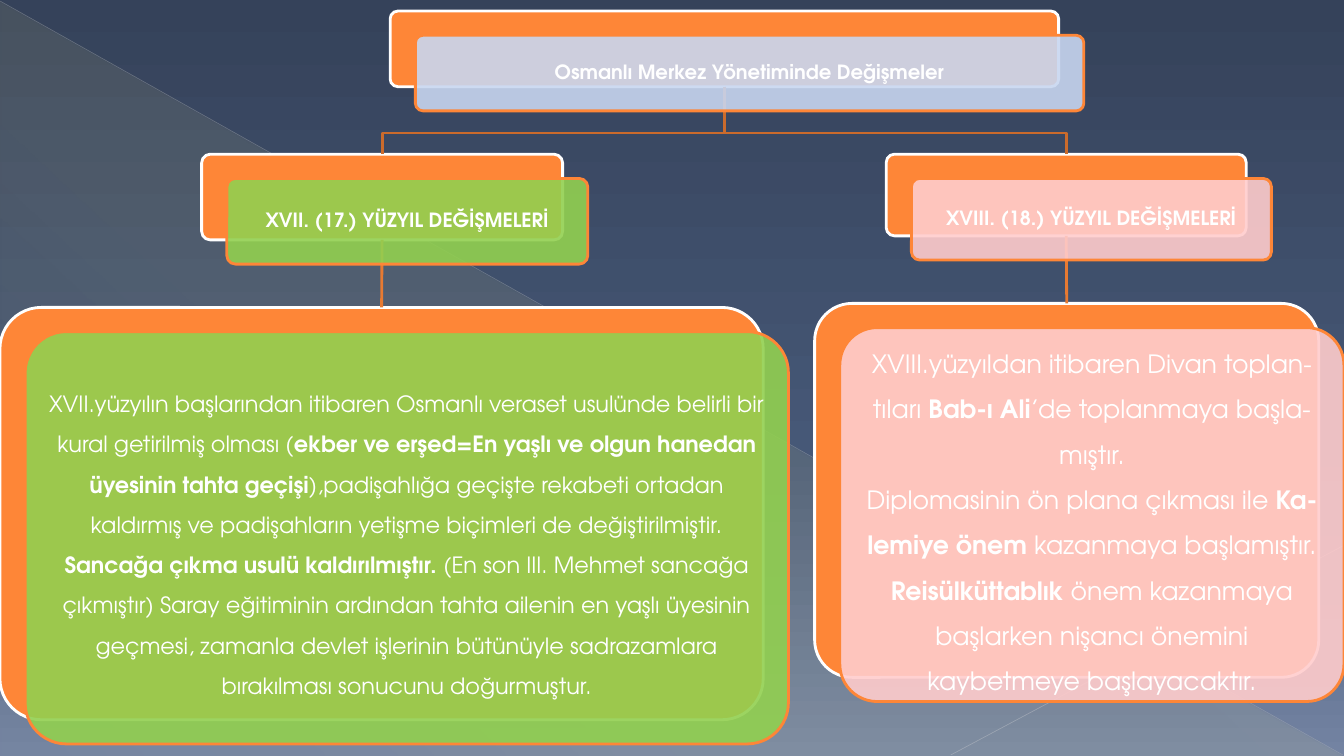
from lxml.etree import SubElement
from pptx import Presentation
from pptx.dml.color import RGBColor
from pptx.enum.shapes import MSO_CONNECTOR, MSO_SHAPE
from pptx.enum.text import MSO_ANCHOR, PP_ALIGN
from pptx.oxml.ns import qn
from pptx.util import Inches, Pt

FONT = "TeX Gyre Adventor"
HEX = {
    "orange": "FE8637", "white": "FFFFFF", "blue": "C8D6F0",
    "green": "92D050", "pink": "FFCCCC", "elbow": "CB6B2C", "drop": "E77A32",
    "top": "35425A", "mid": "465877", "low": "7383A2", "glow": "FFF39D",
    "ray": "BABDC4", "beam": "C1C4CA",
}
SKY = [(0, "top", 100), (60, "mid", 100), (100, "low", 100)]
GLOW = [(0, "glow", 10), (70, "glow", 8), (100, "glow", 1)]
RAYS = [
    ((0, 0.01), (13.32, 7.49), "ray", 0.39, 35),
    ((13.33, 5.41), (9.43, 7.49), "beam", 0.47, 45),
]
TITLE = {"size": 14, "lead": 0.9, "after": 5, "pad": 0.06}
LEFT = {"size": 16, "lead": 1.5, "after": 0, "pad": 0.07}
RIGHT = {"size": 18, "lead": 1.5, "after": 0, "pad": 0.07}
CARDS = {
    "root": ((3.87, 0.11, 6.63, 0.75), "blue", TITLE, [
        [("Osmanlı Merkez Yönetiminde Değişmeler", True)]]),
    "head17": ((2, 1.53, 3.58, 0.85), "green", TITLE, [
        [("XVII. (17.) YÜZYIL DEĞİŞMELERİ", True)]]),
    "body17": ((0, 3.05, 7.57, 4.09), "green", LEFT, [[
        ("XVII.yüzyılın başlarından itibaren Osmanlı veraset usulünde "
         "belirli bir kural getirilmiş olması (", False),
        ("ekber ve erşed=En yaşlı ve olgun hanedan üyesinin tahta geçişi", True),
        ("),padişahlığa geçişte rekabeti ortadan kaldırmış ve padişahların "
         "yetişme biçimleri de değiştirilmiştir. ", False),
        ("Sancağa çıkma usulü kaldırılmıştır. ", True),
        ("(En son III. Mehmet sancağa çıkmıştır) Saray eğitiminin ardından "
         "tahta ailenin en yaşlı üyesinin geçmesi, zamanla devlet işlerinin "
         "bütünüyle sadrazamlara bırakılması sonucunu doğurmuştur.", False)]]),
    "head18": ((8.79, 1.53, 3.57, 0.81), "pink", TITLE, [
        [("XVIII. (18.) YÜZYIL DEĞİŞMELERİ", True)]]),
    "body18": ((8.08, 3.01, 5, 3.71), "pink", RIGHT, [
        [("XVIII.yüzyıldan itibaren Divan toplan-tıları ", False),
         ("Bab-ı Ali", True),
         ("’de toplanmaya başla-mıştır.", False)],
        [("Diplomasinin ön plana çıkması ile ", False),
         ("Ka-lemiye önem ", True),
         ("kazanmaya başlamıştır. ", False),
         ("Reisülküttablık", True),
         (" önem kazanmaya başlarken nişancı önemini kaybetmeye "
          "başlayacaktır.", False)]]),
}
BRANCHES = [("head17", "body17"), ("head18", "body18")]
SHIFT = (0.25, 0.24)
BEND = 1.32


def color(name):
    return RGBColor.from_string(HEX[name])


def fade(node, share):
    if share < 100:
        SubElement(node, qn("a:alpha"), val=str(share * 1000))


def blend(props, stops, angle):
    old = props.find(qn("a:solidFill"))
    grad = SubElement(props, qn("a:gradFill"), rotWithShape="1")
    props.replace(old, grad)
    group = SubElement(grad, qn("a:gsLst"))
    for spot, name, share in stops:
        stop = SubElement(group, qn("a:gs"), pos=str(spot * 1000))
        fade(SubElement(stop, qn("a:srgbClr"), val=HEX[name]), share)
    SubElement(grad, qn("a:lin"), ang=str(angle * 60000), scaled="0")


def link(start, end, name, width):
    points = [Inches(v) for v in start + end]
    line = slide.shapes.add_connector(MSO_CONNECTOR.STRAIGHT, *points)
    line.line.color.rgb = color(name)
    line.line.width = Pt(width)
    SubElement(line.element.spPr, qn("a:effectLst"))
    return line


def plate(box, fill, edge):
    shape = slide.shapes.add_shape(
        MSO_SHAPE.ROUNDED_RECTANGLE, *[Inches(v) for v in box])
    shape.adjustments[0] = 0.1
    shape.shadow.inherit = False
    shape.fill.solid()
    shape.fill.fore_color.rgb = color(fill)
    shape.line.color.rgb = color(edge)
    shape.line.width = Pt(2)
    return shape


def write(shape, paras, style):
    frame = shape.text_frame
    frame.word_wrap = True
    frame.vertical_anchor = MSO_ANCHOR.MIDDLE
    pad = Inches(style["pad"])
    frame.margin_left = frame.margin_right = pad
    frame.margin_top = frame.margin_bottom = pad
    for i, runs in enumerate(paras):
        para = frame.add_paragraph() if i else frame.paragraphs[0]
        para.alignment = PP_ALIGN.CENTER
        para.line_spacing = style["lead"]
        para.space_after = Pt(style["after"])
        for text, bold in runs:
            run = para.add_run()
            run.text = text
            run.font.name = FONT
            run.font.size = Pt(style["size"])
            run.font.bold = bold
            run.font.color.rgb = color("white")


deck = Presentation()
deck.slide_width, deck.slide_height = Inches(13.33), Inches(7.5)
slide = deck.slides.add_slide(deck.slide_layouts[6])
slide.background.fill.solid()
blend(slide.element.find(".//" + qn("p:bgPr")), SKY, 90)

wedge = slide.shapes.add_shape(
    MSO_SHAPE.RIGHT_TRIANGLE, *[Inches(v) for v in (0.01, 0.02, 13.31, 7.48)])
wedge.shadow.inherit = False
wedge.line.fill.background()
wedge.fill.solid()
blend(wedge.element.spPr, GLOW, 133)

for start, end, name, width, share in RAYS:
    ray = link(start, end, name, width)
    fade(ray.element.find(".//" + qn("a:srgbClr")), share)

backs = {key: plate(card[0], "orange", "white") for key, card in CARDS.items()}

x, y, w, h = CARDS["root"][0]
stem = x + w / 2
for head, body in BRANCHES:
    left, top, wide, high = CARDS[head][0]
    mid = left + wide / 2
    path = slide.shapes.build_freeform(
        Inches(stem), Inches(y + h), scale=1.0)
    path.add_line_segments(
        [(Inches(a), Inches(b))
         for a, b in ((stem, BEND), (mid, BEND), (mid, top))], close=False)
    elbow = path.convert_to_shape()
    elbow.shadow.inherit = False
    elbow.fill.background()
    elbow.line.color.rgb = color("elbow")
    elbow.line.width = Pt(2)
    drop = link((mid, top + high), (mid, CARDS[body][0][1]), "drop", 2)
    drop.begin_connect(backs[head], 2)
    drop.end_connect(backs[body], 0)

for (x, y, w, h), fill, style, paras in CARDS.values():
    front = plate((x + SHIFT[0], y + SHIFT[1], w, h), fill, "orange")
    fade(front.element.spPr.find(qn("a:solidFill"))[0], 90)
    write(front, paras, style)

deck.save("out.pptx")
